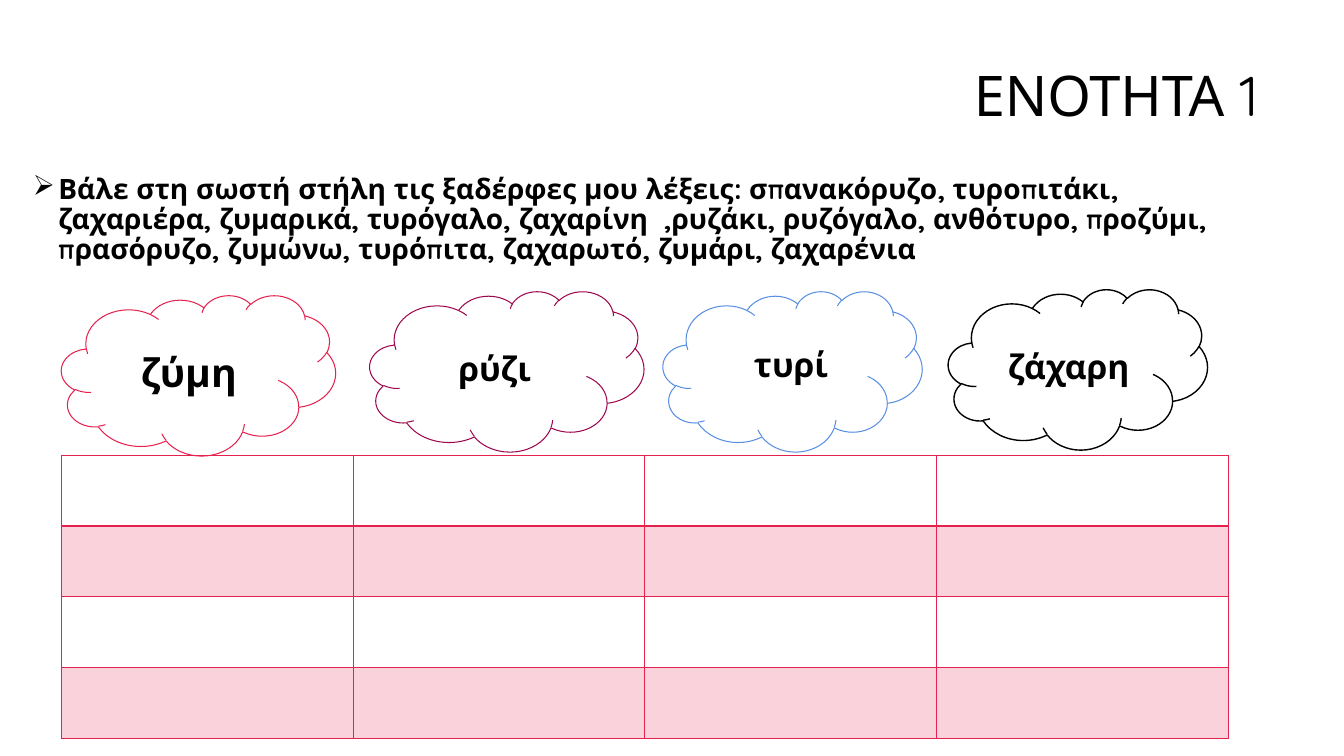
from lxml import etree
from pptx import Presentation
from pptx.dml.color import RGBColor
from pptx.enum.shapes import MSO_SHAPE as Preset
from pptx.enum.text import MSO_ANCHOR as Anchor, PP_ALIGN as Align
from pptx.oxml import parse_xml
from pptx.oxml.ns import nsdecls, qn
from pptx.util import Cm, Pt

BLACK = RGBColor(0x00, 0x00, 0x00)
WHITE = RGBColor(0xFF, 0xFF, 0xFF)
RED = RGBColor(0xE5, 0x22, 0x4E)
PLUM = RGBColor(0x9D, 0x07, 0x4E)
BLUE = RGBColor(0x58, 0x8F, 0xE2)

presentation = Presentation()
presentation.slide_width, presentation.slide_height = Cm(33.87), Cm(19.05)
slide = presentation.slides.add_slide(presentation.slide_layouts[6])


def write(shape, text, size, bold=True, align=Align.LEFT, anchor=Anchor.TOP):
    frame = shape.text_frame
    frame.word_wrap = True
    frame.vertical_anchor = anchor
    paragraph = frame.paragraphs[0]
    paragraph.text = text
    paragraph.alignment = align
    font_format = {"name": "Quicksand", "size": Pt(size), "bold": bold}
    for name, value in font_format.items():
        setattr(paragraph.runs[0].font, name, value)
    paragraph.runs[0].font.color.rgb = BLACK
    return paragraph


def add_text(left, top, width, height, *args, **options):
    box = slide.shapes.add_textbox(Cm(left), Cm(top), Cm(width), Cm(height))
    return write(box, *args, **options)


# Title
title = add_text(8.03, 0.69, 23.93, 3.58, "ΕΝΟΤΗΤΑ 1", 40, bold=False,
                 align=Align.RIGHT, anchor=Anchor.MIDDLE)
title.line_spacing = 0.9

# Exercise instruction
instruction = add_text(
    0.58, 4.29, 31.37, 13,
    "Βάλε στη σωστή στήλη τις ξαδέρφες μου λέξεις: σπανακόρυζο, τυροπιτάκι, "
    "ζαχαριέρα, ζυμαρικά, τυρόγαλο, ζαχαρίνη  ,ρυζάκι, ρυζόγαλο, ανθότυρο, "
    "προζύμι, πρασόρυζο, ζυμώνω, τυρόπιτα, ζαχαρωτό, ζυμάρι, ζαχαρένια", 20)
instruction.line_spacing = 0.9
properties = instruction._p.get_or_add_pPr()
properties.set("marL", str(Cm(0.64)))
properties.set("indent", str(-Cm(0.64)))
etree.SubElement(properties, qn("a:buChar"), char="➢")

# Word clouds: left, top, width, fill, line colour, line width, word, size
clouds = [
    (1.55, 7.44, 6.91, None, RED, 0.75, "ζύμη", 28),
    (9.32, 7.34, 6.91, None, PLUM, 0.75, None, None),
    (16.71, 7.34, 6.53, None, BLUE, 0.75, None, None),
    (23.9, 7.29, 6.53, WHITE, BLACK, 1, "ζάχαρη", 24),
]
for left, top, width, fill, color, weight, word, size in clouds:
    cloud = slide.shapes.add_shape(Preset.CLOUD, Cm(left), Cm(top), Cm(width), Cm(4.04))
    cloud.shadow.inherit = False
    if fill is None:
        cloud.fill.background()
    else:
        cloud.fill.solid()
        cloud.fill.fore_color.rgb = fill
    cloud.line.color.rgb = color
    cloud.line.width = Pt(weight)
    if word:
        write(cloud, word, size, align=Align.CENTER, anchor=Anchor.MIDDLE)

# Labels over the two middle clouds
add_text(11.3, 8.64, 2.57, 1.27, "ρύζι", 24)
add_text(18.75, 8.53, 4.06, 1.27, "τυρί", 24)

# Answer table
ROWS, COLUMNS = 4, 4
table = slide.shapes.add_table(ROWS, COLUMNS, Cm(1.55), Cm(11.48),
                               Cm(29.4), Cm(7.12)).table
table.first_row = table.horz_banding = False
for row in range(ROWS):
    for column in range(COLUMNS):
        cell = table.cell(row, column)
        if row % 2:
            cell.fill.solid()
            cell.fill.fore_color.rgb = RED
        else:
            cell.fill.background()
        cell_properties = cell._tc.get_or_add_tcPr()
        for color_element in cell_properties.iter(qn("a:srgbClr")):
            etree.SubElement(color_element, qn("a:alpha"), val="20000")
        for index, side in enumerate(("lnL", "lnR", "lnT", "lnB")):
            header_edge = (row, side) in ((0, "lnB"), (1, "lnT"))
            weight = Pt(2 if header_edge else 1)
            cell_properties.insert(index, parse_xml(
                f'<a:{side} {nsdecls("a")} w="{weight}"><a:solidFill>'
                f'<a:srgbClr val="{RED}"/></a:solidFill></a:{side}>'))

presentation.save("out.pptx")
